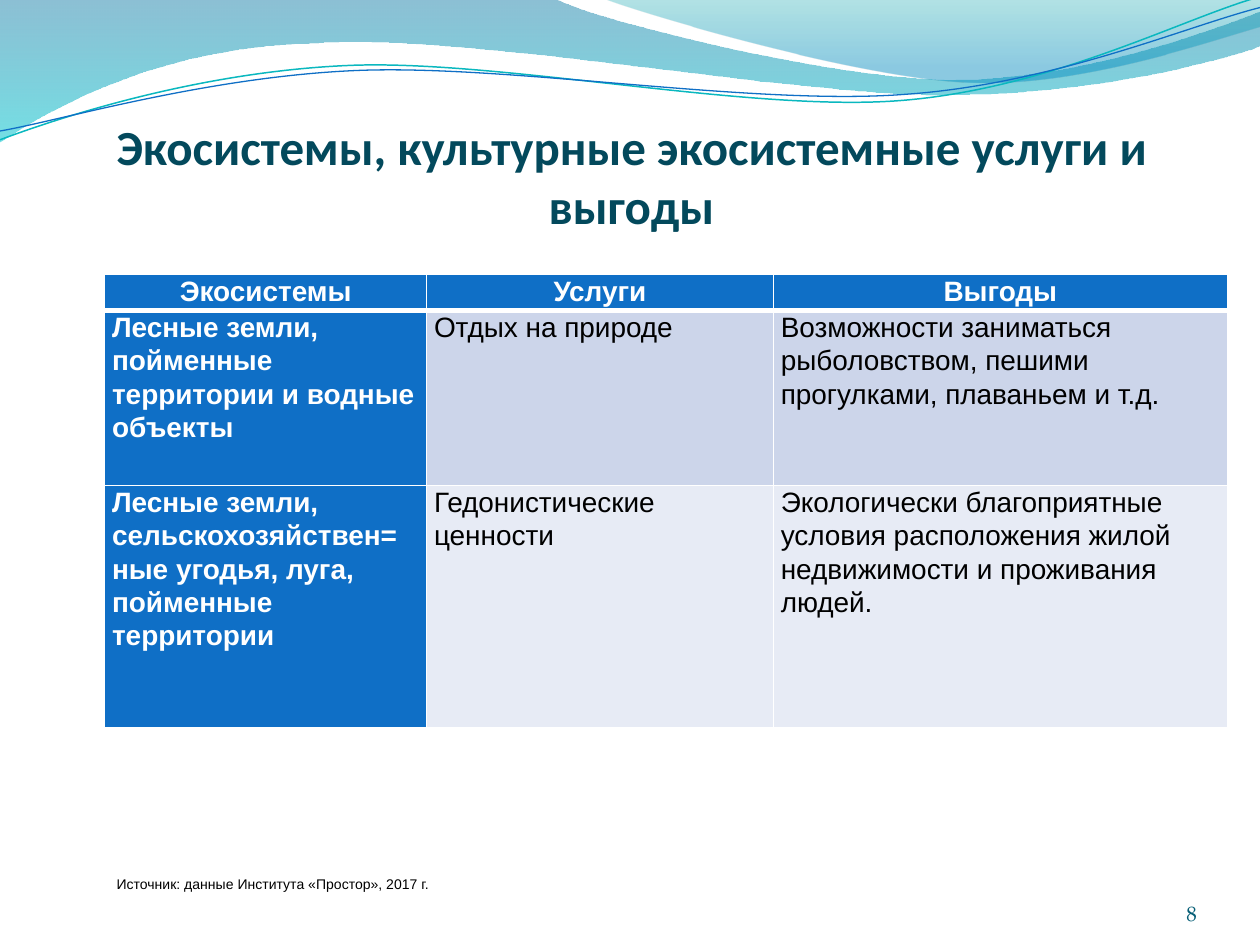
"""Build the slide on ecosystems, cultural ecosystem services and benefits."""
from lxml import etree
from pptx import Presentation
from pptx.dml.color import RGBColor
from pptx.enum.text import MSO_ANCHOR, PP_ALIGN
from pptx.oxml.ns import qn
from pptx.util import Cm, Pt

CENTER, LEFT, RIGHT = PP_ALIGN.CENTER, PP_ALIGN.LEFT, PP_ALIGN.RIGHT
TOP, BOTTOM = MSO_ANCHOR.TOP, MSO_ANCHOR.BOTTOM
WHITE = RGBColor(0xFF, 0xFF, 0xFF)
BLACK = RGBColor(0x00, 0x00, 0x00)
BLUE = RGBColor(0x0F, 0x6F, 0xC6)
TEAL = RGBColor(0x0A, 0xB8, 0xBF)
TITLE_COLOR = RGBColor(0x03, 0x49, 0x5C)
NUMBER_COLOR = RGBColor(0x04, 0x5D, 0x75)
DEEP_BLUE = RGBColor(0x00, 0x74, 0xA1)
CYAN = RGBColor(0x00, 0xC6, 0xCF)
DARK_TEAL = RGBColor(0x00, 0xA1, 0xA9)
SKY = RGBColor(0x00, 0x8B, 0xBF)
BAND_DARK = RGBColor(0xCC, 0xD5, 0xEA)
BAND_LIGHT = RGBColor(0xE7, 0xEB, 0xF5)
WAVE_UNIT = Cm(2.54) / 100

prs = Presentation()
prs.slide_width, prs.slide_height = Cm(25.4), Cm(19.05)
slide = prs.slides.add_slide(prs.slide_layouts[6])


def add_wave(segments, closed):
    ends = [segment[-2:] for segment in segments]
    builder = slide.shapes.build_freeform(*ends[0], scale=WAVE_UNIT)
    builder.add_line_segments(ends[1:], close=closed)
    wave = builder.convert_to_shape()
    wave.shadow.inherit = False
    left, top = (min(values) for values in zip(*ends))
    lines = list(wave._element.iter(qn("a:lnTo")))
    for line, segment in zip(lines, segments[1:]):
        if len(segment) == 6:
            curve = etree.Element(qn("a:cubicBezTo"))
            for x, y in zip(segment[::2], segment[1::2]):
                etree.SubElement(curve, qn("a:pt"), x=str(x - left), y=str(y - top))
            line.getparent().replace(line, curve)
    return wave


def style_text(frame, text, font, size, color, bold=False, align=LEFT):
    frame.text = text
    frame.word_wrap = True
    paragraph = frame.paragraphs[0]
    paragraph.alignment = align
    run_font = paragraph.runs[0].font
    run_font.name, run_font.size, run_font.bold = font, Pt(size), bold
    run_font.color.rgb = color


bands = [
    ([(0, 0), (440, -1), (476, 17, 664, 63, 758, 63), (853, 63, 958, 26, 1000, 9),
      (1001, 36), (983, 44, 870, 76, 746, 75), (622, 75, 382, 28, 257, 34),
      (129, 36, 46, 83, -1, 113)],
     [(0, DEEP_BLUE, 45), (1, CYAN, 55)]),
    ([(479, -1), (509, 11, 682, 62, 769, 65), (856, 69, 961, 32, 1000, 21), (1000, 0)],
     [(0, DARK_TEAL, 30), (0.8, SKY, 45)]),
]
for segments, stops in bands:
    band = add_wave(segments, True)
    band.line.fill.background()
    band.fill.gradient()
    band.fill.gradient_angle = 270
    for stop, (position, color, _) in zip(band.fill.gradient_stops, stops):
        stop.position, stop.color.rgb = position, color
    for node, (_, _, opacity) in zip(band._element.iter(qn("a:srgbClr")), stops):
        etree.SubElement(node, qn("a:alpha"), val=str(opacity * 1000))

strands = [
    ([(0, 111), (48, 93, 158, 57, 277, 52), (395, 47, 593, 89, 713, 80),
      (833, 71, 938, 15, 998, -2)], TEAL, 0.85),
    ([(0, 104), (47, 96, 164, 61, 283, 56), (403, 51, 597, 84, 717, 75),
      (836, 67, 941, 21, 1000, 6)], BLUE, 0.75),
]
for segments, color, width in strands:
    strand = add_wave(segments, False)
    strand.fill.background()
    strand.line.color.rgb = color
    strand.line.width = Pt(width)

labels = [
    ((1.3, 3.12, 22.86, 1.6), (0, 0.13, 0, 0), BOTTOM,
     ("Экосистемы, культурные экосистемные услуги и выгоды",
      "Calibri", 28, TITLE_COLOR, True, CENTER)),
    ((22.02, 17.65, 2.11, 1.02), (0, 0, 0, 0), BOTTOM,
     ("8", "TeX Gyre Pagella", 12, NUMBER_COLOR, False, RIGHT)),
    ((2.1, 17.53, 12.7, 0.6), (0.25, 0.13, 0.25, 0.13), TOP,
     ("Источник: данные Института «Простор», 2017 г.", "Arial", 8, BLACK)),
]
for place, insets, anchor, content in labels:
    frame = slide.shapes.add_textbox(*map(Cm, place)).text_frame
    frame.margin_left, frame.margin_top, frame.margin_right, frame.margin_bottom = map(Cm, insets)
    frame.vertical_anchor = anchor
    style_text(frame, *content)

rows = [
    ("Экосистемы", "Услуги", "Выгоды"),
    ("Лесные земли, пойменные территории и водные объекты",
     "Отдых на природе",
     "Возможности заниматься рыболовством, пешими прогулками, плаваньем и т.д."),
    ("Лесные земли, сельскохозяйствен= ные угодья, луга, пойменные территории",
     "Гедонистические ценности",
     "Экологически благоприятные условия расположения жилой недвижимости "
     "и проживания людей."),
]
band_fills = [BLUE, BAND_DARK, BAND_LIGHT]
services = slide.shapes.add_table(3, 3, Cm(2.11), Cm(5.53), Cm(22.63), Cm(9.05)).table
for column, width in zip(services.columns, (6.49, 6.99, 9.15)):
    column.width = Cm(width)
for row, height in zip(services.rows, (0.64, 3.53, 4.88)):
    row.height = Cm(height)

for r, texts in enumerate(rows):
    for c, text in enumerate(texts):
        cell = services.cell(r, c)
        heading = r == 0 or c == 0
        cell.margin_left = cell.margin_right = Cm(0.15)
        cell.margin_top = cell.margin_bottom = 0
        cell.fill.solid()
        cell.fill.fore_color.rgb = BLUE if heading else band_fills[r]
        style_text(cell.text_frame, text, "Arial", 16, WHITE if heading else BLACK,
                   heading, CENTER if r == 0 else LEFT)
        cell.text_frame.paragraphs[0].line_spacing = 1.07
        properties = cell._tc.get_or_add_tcPr()
        for index, side in enumerate("LRTB"):
            thick = (r, side) in ((0, "B"), (1, "T"))
            border = etree.Element(qn(f"a:ln{side}"), w=str(Pt(3 if thick else 1)))
            solid = etree.SubElement(border, qn("a:solidFill"))
            etree.SubElement(solid, qn("a:srgbClr"), val=str(WHITE))
            properties.insert(index, border)

prs.save("out.pptx")
